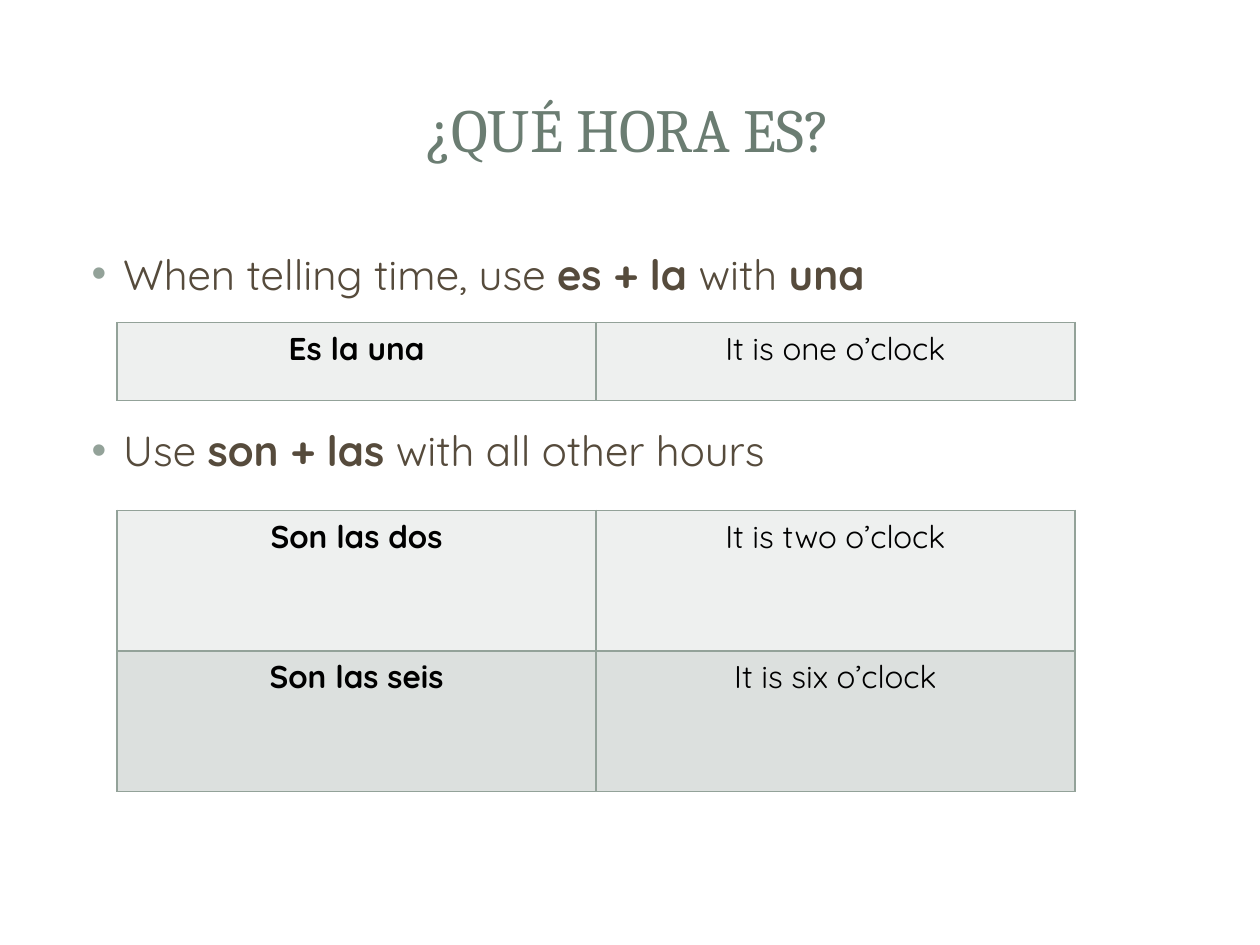
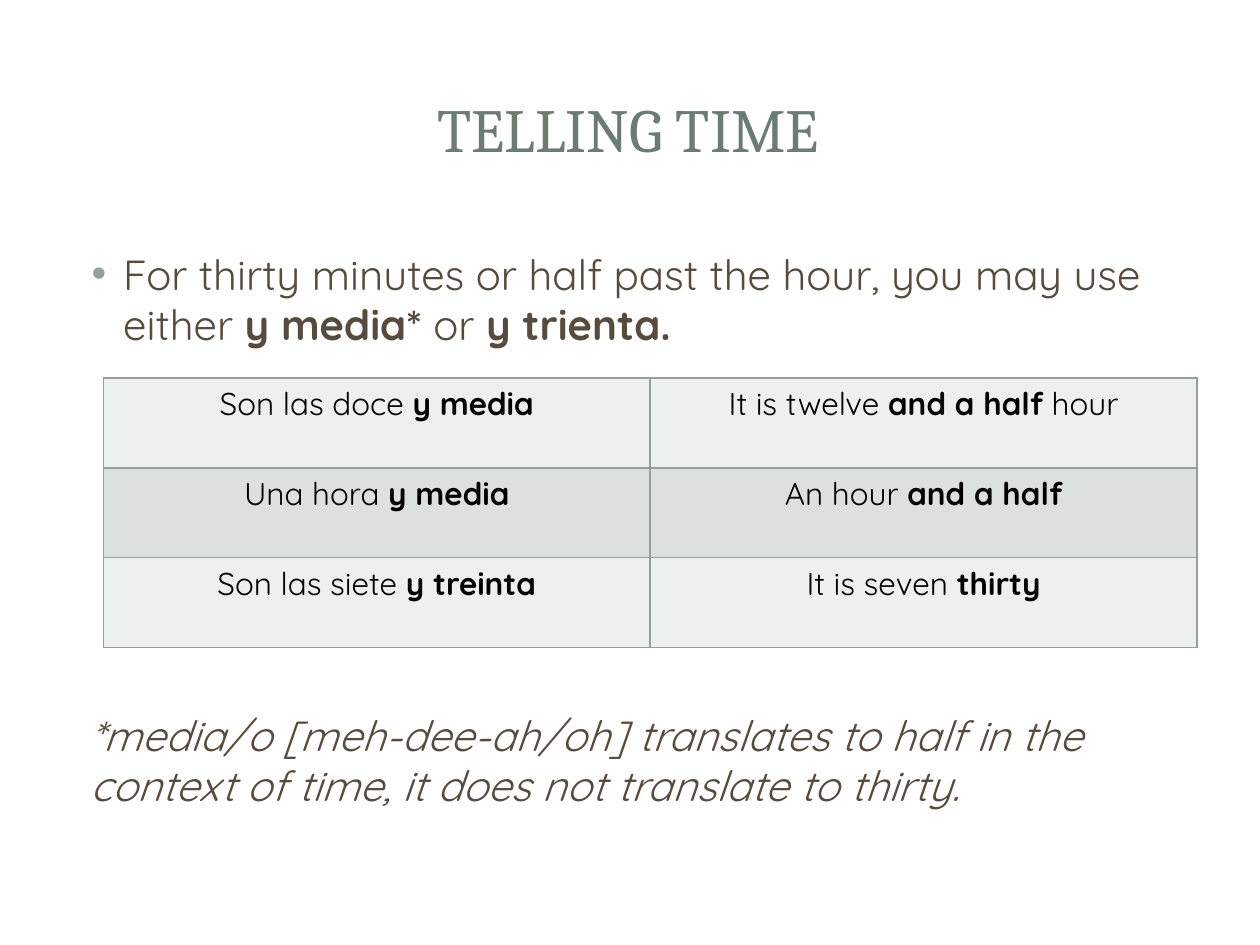
import pptx
import pptx.dml.color
import pptx.enum.shapes
import pptx.enum.text
import pptx.oxml
import pptx.oxml.ns
import pptx.util

PX = pptx.util.Inches(1) // 100
SLIDE_SIZE = (1000, 750)
PAGE_BOX = (10, 11, 980, 729)
BAND_BOX = (30, 30, 940, 145)
TITLE_PANEL_BOX = (41, 41, 917, 122)
TITLE_BOX = (47, 45, 903, 114)
BODY_BOX = (50, 192, 900, 478)
TITLE_FONT, BODY_FONT = "Cambria", "Quicksand"
COLORS = {
    "paper": "FFFFFF",
    "title": "6B7D72",
    "body": "564B3C",
    "accent": "93A299",
    "cell": "000000",
    "odd_row": "EEF0EF",
    "even_row": "DCE0DE",
}
PLAIN, BOLD, ITALIC = "plain", "bold", "italic"


def emu(*lengths):
    return [length * PX for length in lengths]


def rgb(name):
    return pptx.dml.color.RGBColor.from_string(COLORS[name])


def append_xml(parent, tag, content="", **attributes):
    listed = "".join(f' {key}="{value}"' for key, value in attributes.items())
    namespace = pptx.oxml.ns.nsdecls("a")
    parent.append(pptx.oxml.parse_xml(f"<a:{tag} {namespace}{listed}>{content}</a:{tag}>"))


def solid_fill(name):
    return f'<a:solidFill><a:srgbClr val="{COLORS[name]}"/></a:solidFill>'


def write_runs(paragraph, runs, font, size, color):
    for text, style in runs:
        run = paragraph.add_run()
        run.text = text
        run.font.name = font
        run.font.size = pptx.util.Pt(size)
        run.font.color.rgb = rgb(color)
        run.font.bold = style == BOLD
        run.font.italic = style == ITALIC


def add_panel(slide, kind, box):
    panel = slide.shapes.add_shape(kind, *emu(*box))
    panel.shadow.inherit = False
    panel.fill.solid()
    panel.fill.fore_color.rgb = rgb("paper")
    panel.line.fill.background()
    return panel


def add_backdrop(slide):
    kinds = pptx.enum.shapes.MSO_SHAPE
    page = add_panel(slide, kinds.ROUNDED_RECTANGLE, PAGE_BOX)
    page.adjustments[0] = 0.02
    band = add_panel(slide, kinds.RECTANGLE, BAND_BOX)
    band_color = band.fill._xPr.find(".//" + pptx.oxml.ns.qn("a:srgbClr"))
    append_xml(band_color, "alpha", val=83000)
    add_panel(slide, kinds.RECTANGLE, TITLE_PANEL_BOX)


def add_text_frame(slide, box):
    frame = slide.shapes.add_textbox(*emu(*box)).text_frame
    frame.word_wrap = True
    return frame


def add_title(slide, box, title):
    frame = add_text_frame(slide, box)
    frame.vertical_anchor = pptx.enum.text.MSO_ANCHOR.MIDDLE
    heading = frame.paragraphs[0]
    heading.alignment = pptx.enum.text.PP_ALIGN.CENTER
    write_runs(heading, [(title, PLAIN)], TITLE_FONT, 35, "title")


def add_body(slide, box, statements):
    frame = add_text_frame(slide, box)
    for index, (bulleted, gap, runs) in enumerate(statements):
        statement = frame.paragraphs[0] if index == 0 else frame.add_paragraph()
        statement.space_before = pptx.util.Pt(gap)
        write_runs(statement, runs, BODY_FONT, 24, "body")
        margin, indent = emu(38, -25) if bulleted else emu(12, 0)
        properties = statement._p.get_or_add_pPr()
        properties.set("marL", str(margin))
        properties.set("indent", str(indent))
        if bulleted:
            append_xml(properties, "buClr", f'<a:srgbClr val="{COLORS["accent"]}"/>')
            append_xml(properties, "buFont", typeface="Arial")
            append_xml(properties, "buChar", char="•")


def add_phrases(slide, box, phrases):
    left, top, width, height = emu(*box)
    table = slide.shapes.add_table(len(phrases), 2, left, top, width, height).table
    for column in table.columns:
        column.width = width // 2
    for index, pair in enumerate(phrases):
        table.rows[index].height = height // len(phrases)
        for cell, runs in zip(table.rows[index].cells, pair):
            for side in ("lnL", "lnR", "lnT", "lnB"):
                append_xml(cell._tc.get_or_add_tcPr(), side, solid_fill("accent"),
                           w=pptx.util.Pt(1))
            cell.fill.solid()
            cell.fill.fore_color.rgb = rgb("even_row" if index % 2 else "odd_row")
            phrase = cell.text_frame.paragraphs[0]
            phrase.alignment = pptx.enum.text.PP_ALIGN.CENTER
            write_runs(phrase, runs, BODY_FONT, 18, "cell")


def add_lesson(deck, title, statements, tables):
    slide = deck.slides.add_slide(deck.slide_layouts[6])
    add_backdrop(slide)
    add_title(slide, TITLE_BOX, title)
    add_body(slide, BODY_BOX, statements)
    for box, phrases in tables:
        add_phrases(slide, box, phrases)


def hour(spanish, english):
    return [(spanish, BOLD)], [(english, PLAIN)]


def main():
    deck = pptx.Presentation()
    deck.slide_width, deck.slide_height = emu(*SLIDE_SIZE)
    add_lesson(
        deck,
        "¿QUÉ HORA ES?",
        [
            (True, 0, [("When telling time, use ", PLAIN), ("es + la", BOLD),
                       (" with ", PLAIN), ("una", BOLD)]),
            (True, 72, [("Use ", PLAIN), ("son + las", BOLD),
                        (" with all other hours", PLAIN)]),
        ],
        [
            ((93, 405, 760, 223), [hour("Son las dos", "It is two o’clock"),
                                   hour("Son las seis", "It is six o’clock")]),
            ((93, 256, 760, 62), [hour("Es la una", "It is one o’clock")]),
        ],
    )
    add_lesson(
        deck,
        "TELLING TIME",
        [
            (True, 0, [("For thirty minutes or half past the hour, you may use either ", PLAIN),
                       ("y media* ", BOLD), ("or ", PLAIN), ("y trienta.", BOLD)]),
            (False, 206, [("*media/o [meh-dee-ah/oh] translates to half in the context of time, "
                           "it does not translate to thirty.", ITALIC)]),
        ],
        [
            ((82, 300, 868, 214), [
                ([("Son las doce ", PLAIN), ("y media", BOLD)],
                 [("It is twelve ", PLAIN), ("and a half", BOLD), (" hour", PLAIN)]),
                ([("Una hora ", PLAIN), ("y media", BOLD)],
                 [("An hour ", PLAIN), ("and a half", BOLD)]),
                ([("Son las siete ", PLAIN), ("y treinta", BOLD)],
                 [("It is seven ", PLAIN), ("thirty", BOLD)]),
            ]),
        ],
    )
    deck.save("out.pptx")


if __name__ == "__main__":
    main()
